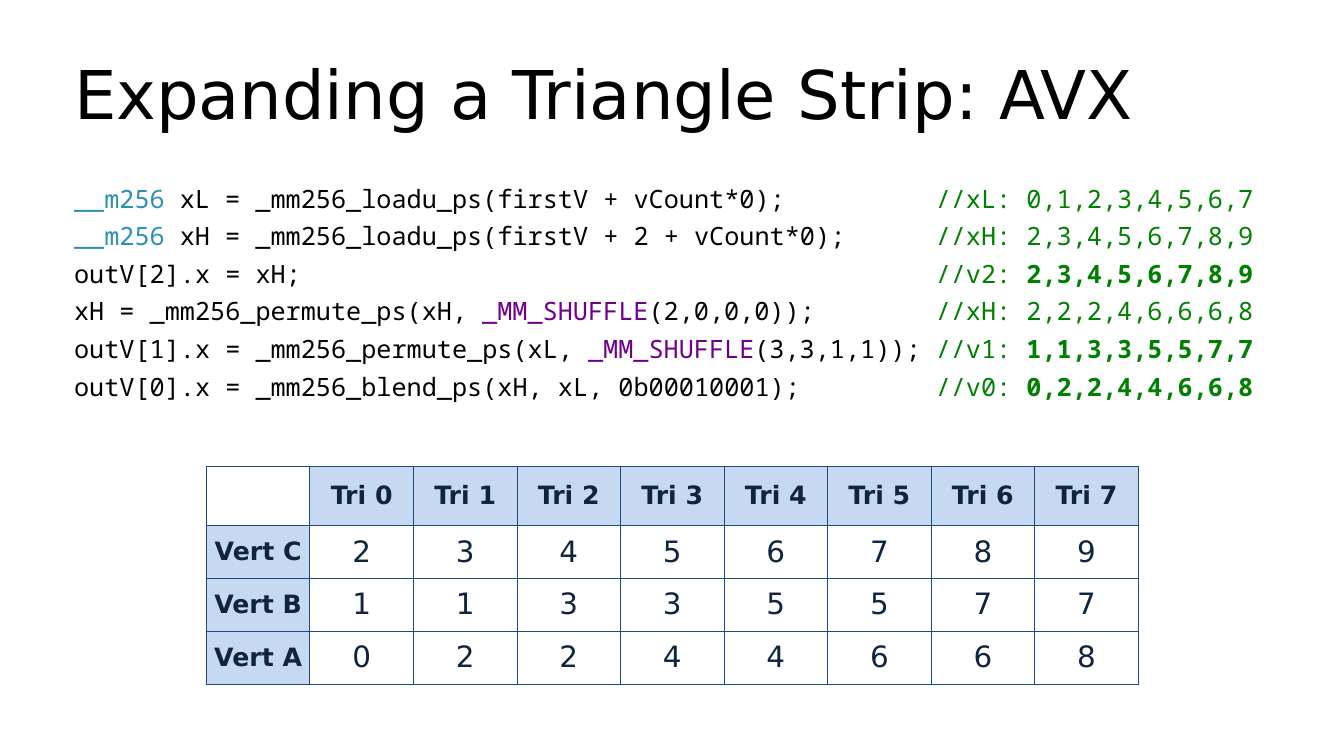
from dataclasses import dataclass

from lxml import etree
from pptx import Presentation
from pptx import util as u
from pptx.dml.color import RGBColor
from pptx.enum import text
from pptx.oxml.ns import qn

WIDTH, HEIGHT = 17.78, 10
MARGIN = 0.05 * WIDTH
INSET = 0.09
SANS, MONO = "DejaVu Sans", "Noto Sans Mono"
BLACK, TYPE, MACRO, COMMENT = "000000", "2B91AF", "6F008A", "008000"
NAVY, HEADER_FILL, BORDER = "0F243E", "C6D9F1", "1F497D"
CODE_SIZE = 24
COMMENT_COLUMN = 57
CHARACTER_WIDTH = 0.6 * CODE_SIZE


@dataclass
class CodeLine:
    tokens: list[tuple[str, str]]
    label: str
    values: str
    is_output: bool = False


CODE = [
    CodeLine([("__m256 ", TYPE), ("xL = _mm256_loadu_ps(firstV + vCount*0);", BLACK)],
             "//xL: ", "0,1,2,3,4,5,6,7"),
    CodeLine([("__m256 ", TYPE), ("xH = _mm256_loadu_ps(firstV + 2 + vCount*0);", BLACK)],
             "//xH: ", "2,3,4,5,6,7,8,9"),
    CodeLine([("outV[2].x = xH;", BLACK)], "//v2: ", "2,3,4,5,6,7,8,9", True),
    CodeLine([("xH = _mm256_permute_ps(xH, ", BLACK), ("_MM_SHUFFLE", MACRO),
              ("(2,0,0,0));", BLACK)], "//xH: ", "2,2,2,4,6,6,6,8"),
    CodeLine([("outV[1].x = _mm256_permute_ps(xL, ", BLACK), ("_MM_SHUFFLE", MACRO),
              ("(3,3,1,1));", BLACK)], "//v1: ", "1,1,3,3,5,5,7,7", True),
    CodeLine([("outV[0].x = _mm256_blend_ps(xH, xL, 0b00010001);", BLACK)],
             "//v0: ", "0,2,2,4,4,6,6,8", True),
]

TABLE = [
    ["", *(f"Tri {number}" for number in range(8))],
    ["Vert C", *"23456789"],
    ["Vert B", *"11335577"],
    ["Vert A", *"02244668"],
]


def color(value: str) -> RGBColor:
    return RGBColor.from_string(value)


def write(paragraph, content: str, *, size: float, font: str, fill: str,
          bold: bool = False, align=text.PP_ALIGN.LEFT) -> None:
    paragraph.alignment = align
    run = paragraph.add_run()
    run.text = content
    run.font.size = u.Pt(size)
    run.font.name = font
    run.font.bold = bold
    run.font.color.rgb = color(fill)


def set_insets(frame) -> None:
    frame.margin_left = frame.margin_right = u.Inches(INSET)
    frame.margin_top = frame.margin_bottom = u.Inches(INSET)


def add_title(slide, content: str) -> None:
    title = slide.shapes.title
    title.left, title.top = u.Inches(MARGIN), u.Inches(0.13)
    title.width, title.height = u.Inches(WIDTH - 2 * MARGIN), u.Inches(2.2)
    frame = title.text_frame
    frame.word_wrap = True
    frame.vertical_anchor = text.MSO_ANCHOR.MIDDLE
    set_insets(frame)
    write(frame.paragraphs[0], content, size=64, font=SANS, fill=BLACK)


def add_tab_stop(paragraph, position: u.Length) -> None:
    tabs = etree.SubElement(paragraph._p.get_or_add_pPr(), qn("a:tabLst"))
    etree.SubElement(tabs, qn("a:tab"), pos=str(int(position)), algn="l")


def add_code(slide, lines: list[CodeLine]) -> None:
    box = slide.shapes.add_textbox(u.Inches(MARGIN), u.Inches(2.33),
                                   u.Inches(WIDTH - 2 * MARGIN), u.Inches(3.6))
    frame = box.text_frame
    frame.word_wrap = True
    set_insets(frame)
    for index, line in enumerate(lines):
        paragraph = frame.add_paragraph() if index else frame.paragraphs[0]
        add_tab_stop(paragraph, u.Pt(COMMENT_COLUMN * CHARACTER_WIDTH))
        if index:
            paragraph.space_before = u.Pt(7)
        for content, fill in [*line.tokens, ("\t" + line.label, COMMENT)]:
            write(paragraph, content, size=CODE_SIZE, font=MONO, fill=fill)
        write(paragraph, line.values, size=CODE_SIZE, font=MONO, fill=COMMENT,
              bold=line.is_output)


def add_borders(cell) -> None:
    properties = cell._tc.get_or_add_tcPr()
    for index, side in enumerate(("lnL", "lnR", "lnT", "lnB")):
        line = etree.Element(qn(f"a:{side}"), w=str(int(u.Pt(1))))
        fill = etree.SubElement(line, qn("a:solidFill"))
        etree.SubElement(fill, qn("a:srgbClr"), val=BORDER)
        properties.insert(index, line)


def add_vertex_table(slide, rows: list[list[str]]) -> None:
    column_width, row_height, header_height = 1.37, 0.7, 0.78
    columns = len(rows[0])
    table = slide.shapes.add_table(
        len(rows), columns, u.Inches(2.73), u.Inches(6.17),
        u.Inches(columns * column_width),
        u.Inches(header_height + (len(rows) - 1) * row_height)).table
    for column in table.columns:
        column.width = u.Inches(column_width)
    for row_index, values in enumerate(rows):
        table.rows[row_index].height = u.Inches(row_height if row_index else header_height)
        for column_index, value in enumerate(values):
            cell = table.cell(row_index, column_index)
            is_header = bool(value) and 0 in (row_index, column_index)
            cell.vertical_anchor = text.MSO_ANCHOR.MIDDLE
            cell.margin_left = cell.margin_right = u.Inches(0.05)
            if is_header:
                cell.fill.solid()
                cell.fill.fore_color.rgb = color(HEADER_FILL)
            else:
                cell.fill.background()
            if value:
                write(cell.text_frame.paragraphs[0], value, size=24 if is_header else 28,
                      font=SANS, fill=NAVY, bold=is_header, align=text.PP_ALIGN.CENTER)
            add_borders(cell)


def main() -> None:
    presentation = Presentation()
    presentation.slide_width = u.Inches(WIDTH)
    presentation.slide_height = u.Inches(HEIGHT)
    slide = presentation.slides.add_slide(presentation.slide_layouts[5])
    add_title(slide, "Expanding a Triangle Strip: AVX")
    add_code(slide, CODE)
    add_vertex_table(slide, TABLE)
    presentation.save("out.pptx")


if __name__ == "__main__":
    main()
